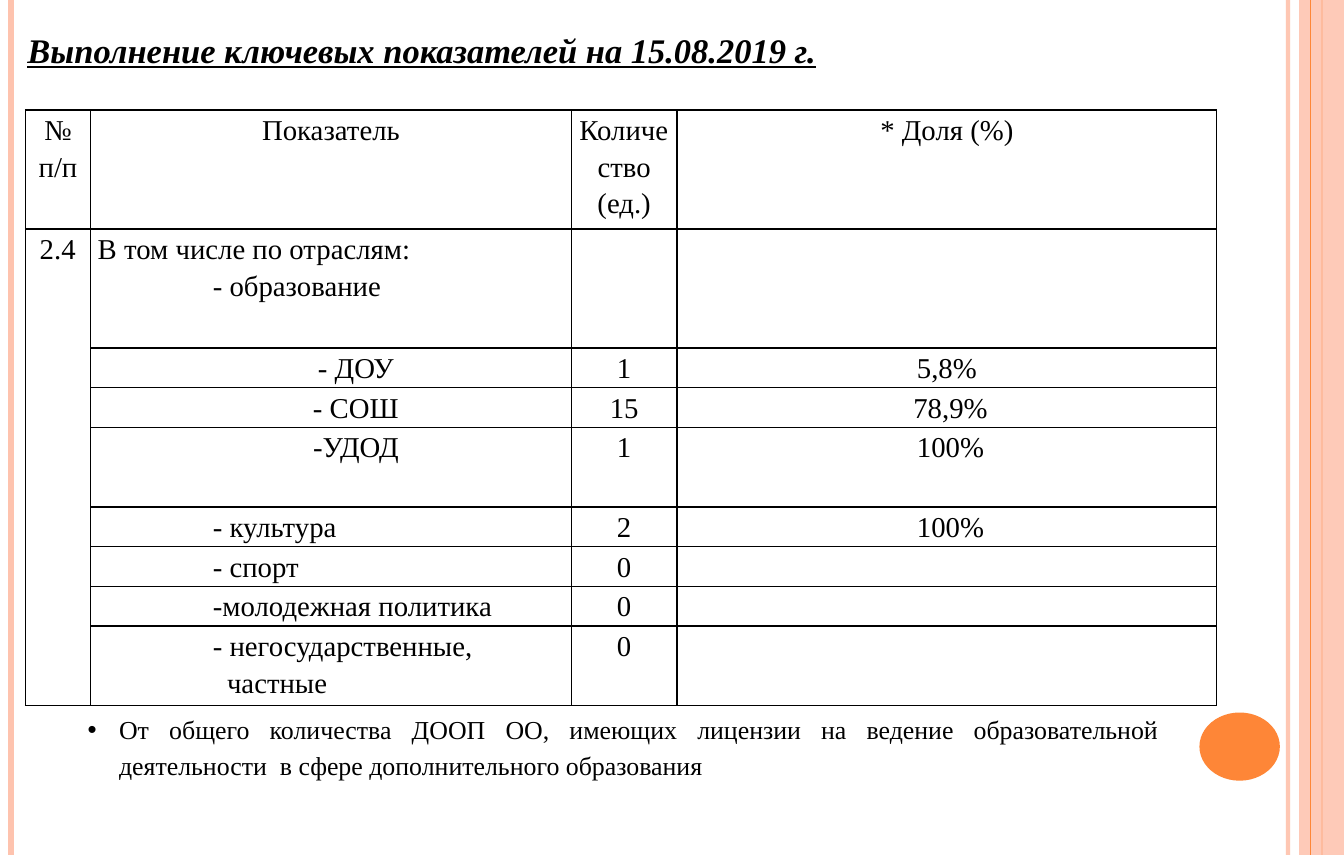
from lxml.etree import SubElement
from pptx import Presentation
from pptx.dml.color import RGBColor
from pptx.enum.shapes import MSO_CONNECTOR, MSO_SHAPE
from pptx.enum.text import PP_ALIGN
from pptx.oxml.ns import qn
from pptx.util import Emu, Pt

PX = 9000
WIDTH, HEIGHT = 1320, 840
ORANGE, PEACH, BLACK = "FE8637", "FEC3AE", "000000"
FONT = "Times New Roman"
CENTER, LEFT, JUSTIFY = PP_ALIGN.CENTER, PP_ALIGN.LEFT, PP_ALIGN.JUSTIFY

COLUMNS = [64, 472, 104, 530]
LINE_HEIGHT = 39
HEADINGS = ["№ п/п", "Показатель", "Количество (ед.)", "* Доля (%)"]
BRANCH, SUBBRANCH = (LEFT, 113), (CENTER, 49)
# lines of the row, [(text, (alignment, indent))], count, share, indent of the share
INDICATORS = [
    (3, [("В том числе по отраслям:", (LEFT, 0)), ("- образование", BRANCH)], "", "", 0),
    (1, [("- ДОУ", SUBBRANCH)], "1", "5,8%", 0),
    (1, [("- СОШ", SUBBRANCH)], "15", "78,9%", 7),
    (2, [("-УДОД", SUBBRANCH)], "1", "100%", 7),
    (1, [("- культура", BRANCH)], "2", "100%", 7),
    (1, [("- спорт", BRANCH)], "0", "", 0),
    (1, [("-молодежная политика", BRANCH)], "0", "", 0),
    (2, [("- негосударственные,", BRANCH), ("частные", (LEFT, 127))], "0", "", 0),
]


def px(length):
    return Emu(length * PX)


def rgb(color):
    return RGBColor.from_string(color)


def set_alpha(fill, percent):
    color = fill._xPr.find(qn("a:solidFill"))[0]
    SubElement(color, qn("a:alpha"), val=str(percent * 1000))


def add_text(frame, text, size=20, align=LEFT, spacing=1.15, indent=0, hanging=0,
             bullet=None, bold=False, italic=False, underline=False):
    """Fill the first paragraph of the frame, or add one if it is taken."""
    paragraph = frame.paragraphs[0]
    if paragraph.runs:
        paragraph = frame.add_paragraph()
    paragraph.alignment = align
    paragraph.line_spacing = spacing
    properties = paragraph._p.get_or_add_pPr()
    properties.set("marL", str(px(indent)))
    properties.set("indent", str(px(-hanging)))
    if bullet:
        SubElement(properties, qn("a:buFont"), typeface="Arial")
        SubElement(properties, qn("a:buChar"), char=bullet)
    run = paragraph.add_run()
    run.text = text
    font = run.font
    font.name, font.size, font.color.rgb = FONT, Pt(size), rgb(BLACK)
    font.bold, font.italic, font.underline = bold, italic, underline


def add_text_box(slide, box, text, inset=10, **style):
    frame = slide.shapes.add_textbox(*map(px, box)).text_frame
    frame.word_wrap = True
    frame.margin_left = frame.margin_right = px(inset)
    frame.margin_top = frame.margin_bottom = px(5)
    add_text(frame, text, **style)


def add_vertical_rule(slide, x, color, weight, alpha=100):
    rule = slide.shapes.add_connector(MSO_CONNECTOR.STRAIGHT, px(x), 0, px(x), px(HEIGHT))
    rule.line.color.rgb = rgb(color)
    rule.line.width = Pt(weight)
    set_alpha(rule.line.fill, alpha)
    SubElement(rule._element.spPr, qn("a:effectLst"))


def add_plain_shape(slide, kind, box, color, alpha=100):
    shape = slide.shapes.add_shape(kind, *map(px, box))
    shape.shadow.inherit = False
    shape.fill.solid()
    shape.fill.fore_color.rgb = rgb(color)
    set_alpha(shape.fill, alpha)
    shape.line.fill.background()


def add_side_decoration(slide):
    add_vertical_rule(slide, WIDTH - 55, PEACH, 3, alpha=93)
    add_vertical_rule(slide, 11, PEACH, 4.5)
    add_vertical_rule(slide, WIDTH - 22, ORANGE, 1.5)
    add_plain_shape(slide, MSO_SHAPE.RECTANGLE, (WIDTH - 44, 0, 44, HEIGHT), PEACH, alpha=87)
    add_vertical_rule(slide, WIDTH - 33, ORANGE, 0.75)
    add_plain_shape(slide, MSO_SHAPE.OVAL, (1178, 700, 79, 67), ORANGE)


def format_cell(cell):
    cell.margin_left = cell.margin_right = px(7)
    cell.margin_top = cell.margin_bottom = 0
    properties = cell._tc.get_or_add_tcPr()
    for side in ("lnL", "lnR", "lnT", "lnB"):
        border = SubElement(properties, qn(f"a:{side}"), w=str(Pt(1)))
        fill = SubElement(border, qn("a:solidFill"))
        SubElement(fill, qn("a:srgbClr"), val=BLACK)
    cell.fill.background()


def add_indicator_table(slide, left, top):
    heights = [LINE_HEIGHT * lines for lines in [3] + [row[0] for row in INDICATORS]]
    table = slide.shapes.add_table(len(heights), len(COLUMNS), px(left), px(top),
                                   px(sum(COLUMNS)), px(sum(heights))).table
    table.first_row = table.horz_banding = False
    for column, width in zip(table.columns, COLUMNS):
        column.width = px(width)
    for row, height in zip(table.rows, heights):
        row.height = px(height)
    for cell in table.iter_cells():
        format_cell(cell)

    for column, heading in enumerate(HEADINGS):
        add_text(table.cell(0, column).text_frame, heading, align=CENTER)
    table.cell(1, 0).merge(table.cell(len(INDICATORS), 0))
    add_text(table.cell(1, 0).text_frame, "2.4", indent=7)
    for row, (_, names, count, share, share_indent) in enumerate(INDICATORS, 1):
        for name, (align, indent) in names:
            add_text(table.cell(row, 1).text_frame, name, align=align, indent=indent)
        if count:
            add_text(table.cell(row, 2).text_frame, count, align=CENTER)
        if share:
            add_text(table.cell(row, 3).text_frame, share, align=CENTER, indent=share_indent)


def main():
    presentation = Presentation()
    presentation.slide_width, presentation.slide_height = px(WIDTH), px(HEIGHT)
    slide = presentation.slides.add_slide(presentation.slide_layouts[6])
    add_side_decoration(slide)
    add_text_box(slide, (22, 28, 992, 47), "Выполнение ключевых показателей на 15.08.2019 г.",
                 inset=5, size=24, spacing=0.9, bold=True, italic=True, underline=True)
    add_indicator_table(slide, 25, 108)
    add_text_box(slide, (76, 692, 1072, 78),
                 "От общего количества ДООП ОО, имеющих лицензии на ведение образовательной "
                 "деятельности  в сфере дополнительного образования",
                 size=18, align=JUSTIFY, indent=31, hanging=31, bullet="•")
    presentation.save("out.pptx")


if __name__ == "__main__":
    main()
